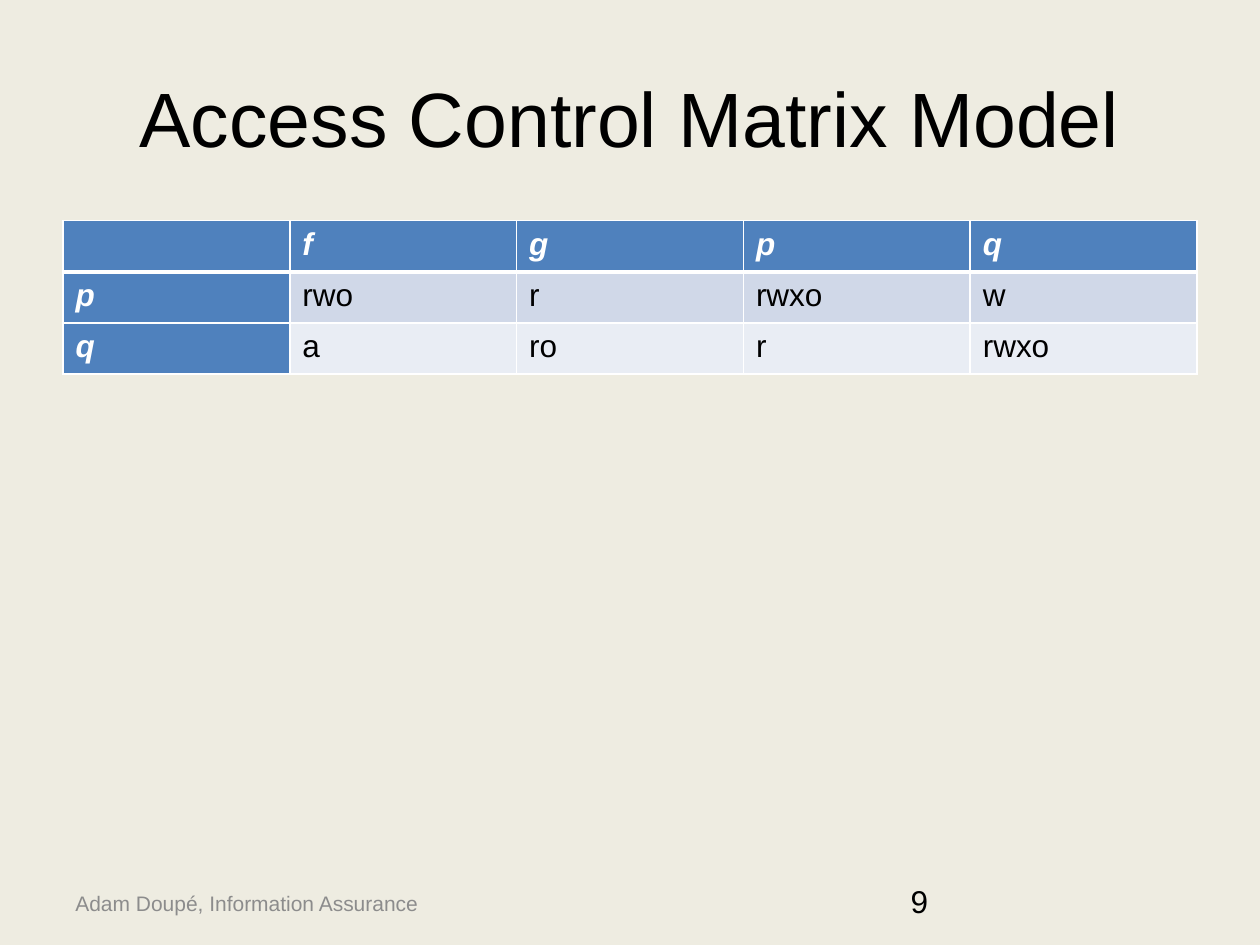
from lxml.etree import SubElement
from pptx import Presentation
from pptx.dml.color import RGBColor
from pptx.enum.text import MSO_ANCHOR, PP_ALIGN
from pptx.oxml.ns import qn
from pptx.util import Cm, Pt

BLACK, WHITE, GREY = "000000", "FFFFFF", "8C8C8C"
BACKGROUND, HEADER = "EEECE1", "4F81BD"
BANDS = ("D0D8E8", "E9EDF4")
MATRIX = [
    ["", "f", "g", "p", "q"],
    ["p", "rwo", "r", "rwxo", "w"],
    ["q", "a", "ro", "r", "rwxo"],
]


def color(value):
    return RGBColor.from_string(value)


def write(frame, text, ink, **formats):
    paragraph = frame.paragraphs[0]
    span = paragraph.add_run()
    span.text = text
    span.font.color.rgb = color(ink)
    for name, value in {"name": "Arial", **formats}.items():
        setattr(span.font, name, value)
    return paragraph


def place(shape, left, top, width, height):
    shape.left, shape.top = Cm(left), Cm(top)
    shape.width, shape.height = Cm(width), Cm(height)


def add_title(page, text):
    title = page.shapes.title
    place(title, 1.27, 0.76, 22.86, 3.18)
    title.text_frame.vertical_anchor = MSO_ANCHOR.MIDDLE
    write(title.text_frame, text, BLACK, size=Pt(44)).alignment = PP_ALIGN.CENTER


def add_label(page, text, position, ink, size, anchor):
    box = page.shapes.add_textbox(*map(Cm, position))
    box.text_frame.word_wrap = True
    box.text_frame.vertical_anchor = anchor
    write(box.text_frame, text, ink, size=Pt(size))


def add_borders(cell, widths):
    """Draw white borders; widths maps the sides L, R, T, B to points."""
    properties = cell._tc.get_or_add_tcPr()
    for side, width in widths.items():
        line = SubElement(properties, qn(f"a:ln{side}"), w=str(Pt(width)))
        fill = SubElement(line, qn("a:solidFill"))
        SubElement(fill, qn("a:srgbClr"), val=WHITE)


def fill_cell(cell, text, row, column):
    is_header = row == 0 or column == 0
    add_borders(cell, {"L": 1, "R": 1,
                       "T": 3 if row == 1 else 1,
                       "B": 3 if row == 0 else 1})
    cell.fill.solid()
    cell.fill.fore_color.rgb = color(HEADER if is_header else BANDS[row - 1])
    if text:
        write(cell.text_frame, text, WHITE if is_header else BLACK,
              size=Pt(18), bold=is_header, italic=is_header)


def add_matrix(page, values):
    position = map(Cm, (1.27, 4.45, 22.86, 3.09))
    table = page.shapes.add_table(len(values), len(values[0]), *position).table
    for row, texts in enumerate(values):
        for column, text in enumerate(texts):
            fill_cell(table.cell(row, column), text, row, column)


def main():
    deck = Presentation()
    deck.slide_width, deck.slide_height = Cm(25.4), Cm(19.05)
    page = deck.slides.add_slide(deck.slide_layouts[5])
    page.background.fill.solid()
    page.background.fill.fore_color.rgb = color(BACKGROUND)
    add_label(page, "Adam Doupé, Information Assurance",
              (1.27, 17.7, 10.82, 1.02), GREY, 12, MSO_ANCHOR.MIDDLE)
    add_title(page, "Access Control Matrix Model")
    add_matrix(page, MATRIX)
    add_label(page, "9", (18.11, 17.65, 5.92, 1.02), BLACK, 18, MSO_ANCHOR.TOP)
    deck.save("out.pptx")


if __name__ == "__main__":
    main()
